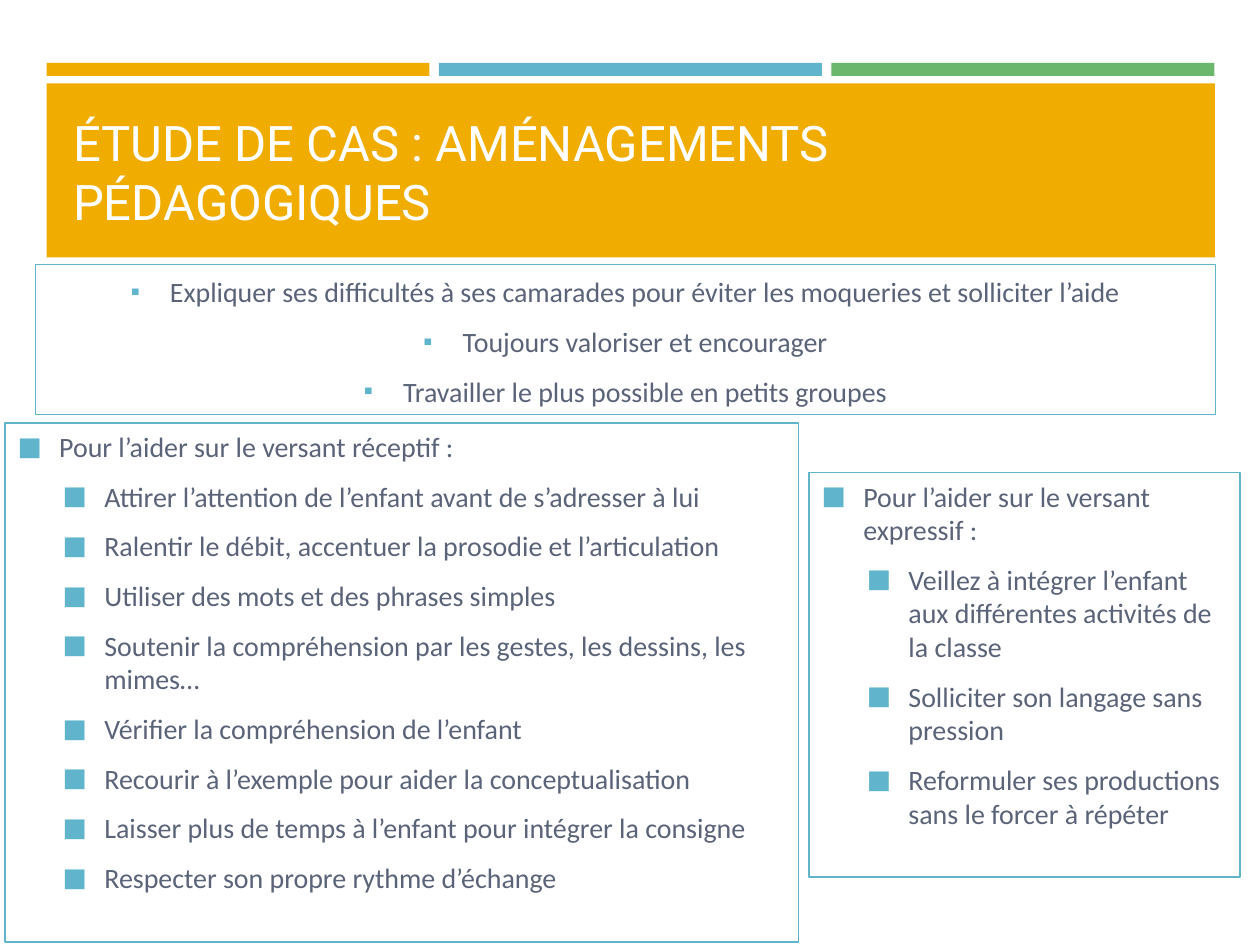
"""Build the slide on classroom adjustments for a language case study."""
from lxml import etree
from pptx import Presentation
from pptx import util as u
from pptx.dml.color import RGBColor
from pptx.enum import shapes, text
from pptx.oxml import ns

ORANGE = RGBColor(0xF0, 0xAD, 0x00)
BLUE = RGBColor(0x60, 0xB5, 0xCC)
GREEN = RGBColor(0x6B, 0xB7, 0x6D)
SLATE = RGBColor(0x5A, 0x63, 0x78)
WHITE = RGBColor(0xFF, 0xFF, 0xFF)

TITLE = "ÉTUDE DE CAS : AMÉNAGEMENTS PÉDAGOGIQUES"
TITLE_BOX = (1.22, 2.03, 22.99, 2.74)
GENERAL = [
    (0, "Expliquer ses difficultés à ses camarades pour éviter les moqueries et solliciter l’aide"),
    (0, "Toujours valoriser et encourager"),
    (0, "Travailler le plus possible en petits groupes"),
]
RECEPTIVE = [
    (0, "Pour l’aider sur le versant réceptif :"),
    (1, "Attirer l’attention de l’enfant avant de s’adresser à lui"),
    (1, "Ralentir le débit, accentuer la prosodie et l’articulation"),
    (1, "Utiliser des mots et des phrases simples"),
    (1, "Soutenir la compréhension par les gestes, les dessins, les mimes…"),
    (1, "Vérifier la compréhension de l’enfant"),
    (1, "Recourir à l’exemple pour aider la conceptualisation"),
    (1, "Laisser plus de temps à l’enfant pour intégrer la consigne"),
    (1, "Respecter son propre rythme d’échange"),
]
EXPRESSIVE = [
    (0, "Pour l’aider sur le versant expressif :"),
    (1, "Veillez à intégrer l’enfant aux différentes activités de la classe"),
    (1, "Solliciter son langage sans pression"),
    (1, "Reformuler ses productions sans le forcer à répéter"),
]
CENTER, LEFT = text.PP_ALIGN.CENTER, text.PP_ALIGN.LEFT
BOTTOM, TOP = text.MSO_ANCHOR.BOTTOM, text.MSO_ANCHOR.TOP
LISTS = [
    (1, (0.71, 5.33, 23.8, 3.02), GENERAL, "▪", 0.79, CENTER, BOTTOM),
    (2, (0.1, 8.53, 16, 10.46), RECEPTIVE, "■", 0.84, LEFT, TOP),
    (4, (16.31, 9.53, 8.69, 8.15), EXPRESSIVE, "■", 0.84, LEFT, TOP),
]
LEVEL_STEP = 0.91
BAR_LEFT, BAR_TOP, BAR_W, BAR_H, BAR_PITCH = 0.94, 1.27, 7.72, 0.26, 7.91
BARS = [((BAR_LEFT + i * BAR_PITCH, BAR_TOP, BAR_W, BAR_H), color)
        for i, color in enumerate((ORANGE, BLUE, GREEN))]
BAND = ((BAR_LEFT, 1.68, 23.55, 3.51), ORANGE)
TITLE_FONT = {"name": "Roboto", "size": u.Pt(28), "bold": False}
BODY_FONT = {"name": "Calibri", "size": u.Pt(16), "bold": False}


def apply(obj, values):
    for name, value in values.items():
        setattr(obj, name, value)


def place(sp, box):
    apply(sp, dict(zip(("left", "top", "width", "height"), map(u.Cm, box))))


def write(p, content, font, color):
    r = p.add_run()
    r.text = content
    apply(r.font, font)
    r.font.color.rgb = color


def add_bullet(p, char, margin, hang):
    pPr = p._p.get_or_add_pPr()
    pPr.set("marL", str(u.Cm(margin)))
    pPr.set("indent", str(-u.Cm(hang)))
    color = etree.SubElement(pPr, ns.qn("a:buClr"))
    etree.SubElement(color, ns.qn("a:srgbClr"), val=str(BLUE))
    etree.SubElement(pPr, ns.qn("a:buSzPct"), val="92000")
    etree.SubElement(pPr, ns.qn("a:buFont"), typeface="Calibri")
    etree.SubElement(pPr, ns.qn("a:buChar"), char=char)


def fill_list(sp, box, items, char, hang, align, anchor):
    place(sp, box)
    sp.line.color.rgb = BLUE
    sp.line.width = u.Pt(0.75)
    tf = sp.text_frame
    apply(tf, {"word_wrap": True, "auto_size": text.MSO_AUTO_SIZE.NONE,
               "vertical_anchor": anchor})
    for i, (level, content) in enumerate(items):
        p = tf.add_paragraph() if i else tf.paragraphs[0]
        add_bullet(p, char, hang + level * LEVEL_STEP, hang)
        apply(p, {"level": level, "alignment": align, "space_after": u.Pt(6),
                  "space_before": u.Pt(3.2 if i else 0)})
        write(p, content, BODY_FONT, SLATE)


def main():
    prs = Presentation()
    apply(prs, {"slide_width": u.Cm(25.4), "slide_height": u.Cm(19.05)})
    s = prs.slides.add_slide(prs.slide_layouts.get_by_name("Comparison"))
    holders = {sp.placeholder_format.idx: sp for sp in s.placeholders}

    for i, (box, color) in enumerate(BARS + [BAND]):
        sp = s.shapes.add_shape(shapes.MSO_SHAPE.RECTANGLE, *map(u.Cm, box))
        sp.shadow.inherit = False
        sp.fill.solid()
        sp.fill.fore_color.rgb = color
        sp.line.fill.background()
        s.shapes._spTree.insert(2 + i, sp._element)

    title = s.shapes.title
    place(title, TITLE_BOX)
    tf = title.text_frame
    apply(tf, {"word_wrap": True, "auto_size": text.MSO_AUTO_SIZE.NONE,
               "vertical_anchor": BOTTOM})
    tf.paragraphs[0].alignment = LEFT
    write(tf.paragraphs[0], TITLE, TITLE_FONT, WHITE)

    for idx, *content in LISTS:
        fill_list(holders[idx], *content)
    unused = holders[3]._element
    unused.getparent().remove(unused)
    prs.save("out.pptx")


if __name__ == "__main__":
    main()
